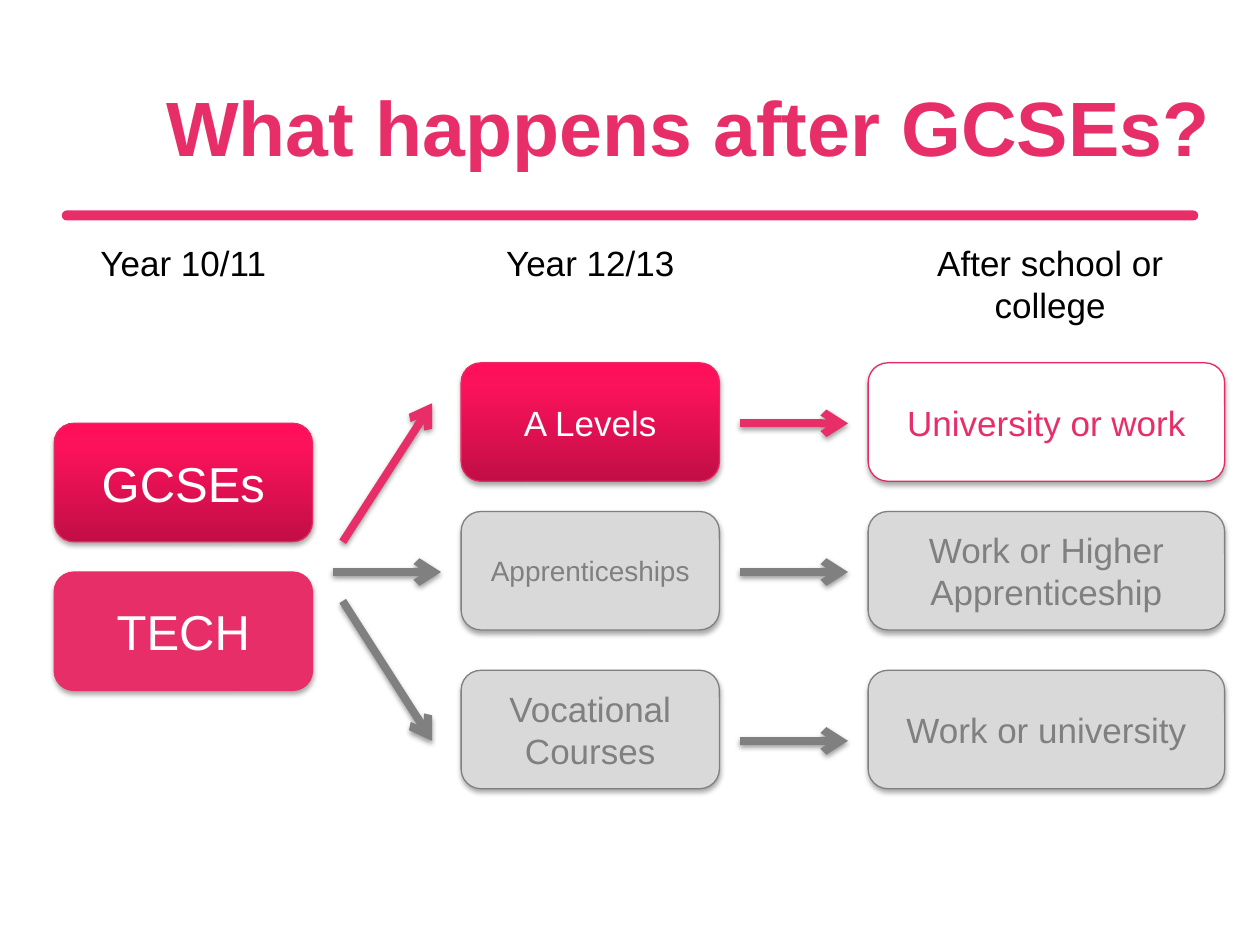
import copy
import pptx
import pptx.util
import pptx.dml.color
import pptx.enum.shapes
import pptx.enum.text
import pptx.oxml
import pptx.oxml.ns

Inches, Pt = pptx.util.Inches, pptx.util.Pt
Align, Anchor = pptx.enum.text.PP_ALIGN, pptx.enum.text.MSO_ANCHOR
Round = pptx.enum.shapes.MSO_SHAPE.ROUNDED_RECTANGLE
Line = pptx.enum.shapes.MSO_CONNECTOR.STRAIGHT
qn = pptx.oxml.ns.qn

PINK, EDGE, GREY, PALE, WHITE, BLACK = "E72E68", "E62864", "808080", "D9D9D9", "FFFFFF", "000000"
GLOW = [(0, "C10E46"), (0.8, "FB125B"), (1, "FF0F5A")]
LEFT, MID, RIGHT = (0.43, 2.05), (3.66, 2.05), (6.89, 2.83)
ROWS = [2.88, 4.06, 5.32]
TALL = 0.94

TITLE = "What happens after GCSEs?"
HEADS = [
    (0.43, 2.05, 0.44, "Year 10/11"),
    (3.66, 2.05, 0.44, "Year 12/13"),
    (6.94, 2.79, 0.77, "After school or\ncollege"),
]
STYLES = {
    "glow": (GLOW, EDGE, WHITE),
    "pink": (PINK, PINK, WHITE),
    "open": (WHITE, EDGE, PINK),
    "grey": (PALE, GREY, GREY),
}
BOXES = [
    (LEFT, 3.36, "GCSEs", 28, "glow"),
    (LEFT, 4.54, "TECH", 28, "pink"),
    (MID, ROWS[0], "A Levels", 20, "glow"),
    (MID, ROWS[1], "Apprenticeships", 16, "grey"),
    (MID, ROWS[2], "Vocational Courses", 20, "grey"),
    (RIGHT, ROWS[0], "University or work", 20, "open"),
    (RIGHT, ROWS[1], "Work or Higher Apprenticeship", 20, "grey"),
    (RIGHT, ROWS[2], "Work or university", 20, "grey"),
]
ARROWS = [
    (2.72, 4.3, 3.43, 3.2, PINK),
    (2.64, 4.54, 3.5, 4.54, GREY),
    (2.72, 4.77, 3.43, 5.88, GREY),
] + [(5.87, y, 6.73, y, tint) for y, tint in ((3.36, PINK), (4.54, GREY), (5.88, GREY))]


def color(code):
    return pptx.dml.color.RGBColor.from_string(code)


def write(shape, text, size=20, tint=BLACK, bold=False, align=Align.CENTER, anchor=Anchor.MIDDLE):
    frame = shape.text_frame
    frame.word_wrap = True
    frame.vertical_anchor = anchor
    frame.text = text
    for para in frame.paragraphs:
        para.alignment = align
        font = para.font
        font.name, font.size, font.bold = "Arial", Pt(size), bold
        font.color.rgb = color(tint)


def paint(fill, look):
    if isinstance(look, str):
        fill.solid()
        fill.fore_color.rgb = color(look)
        return
    fill.gradient()
    fill.gradient_angle = 90
    first = fill.gradient_stops[0]._gs
    first.addnext(copy.deepcopy(first))
    for stop, (place, code) in zip(fill.gradient_stops, look):
        stop.position = place
        stop.color.rgb = color(code)


def shade(shape, alpha, drop):
    shape._element.spPr.append(pptx.oxml.parse_xml(
        f'<a:effectLst {pptx.oxml.ns.nsdecls("a")}>'
        f'<a:outerShdw blurRad="{Pt(3.1)}" dist="{Pt(drop)}" dir="5400000" rotWithShape="0">'
        f'<a:srgbClr val="{BLACK}"><a:alpha val="{alpha * 1000}"/></a:srgbClr>'
        '</a:outerShdw></a:effectLst>'))


def block(x, y, w, h, look):
    shape = slide.shapes.add_shape(Round, Inches(x), Inches(y), Inches(w), Inches(h))
    paint(shape.fill, look)
    return shape


deck = pptx.Presentation()
deck.slide_width, deck.slide_height = Inches(10), Inches(7.5)
slide = deck.slides.add_slide(deck.slide_layouts[5])

title = slide.shapes.title
title.left, title.top, title.width, title.height = map(Inches, (1.22, 0.37, 8.78, 1.25))
write(title, TITLE, size=44, tint=PINK, bold=True, align=Align.LEFT)

rule = block(0.49, 1.67, 9.02, 0.08, PINK)
rule.adjustments[0] = 0.5
rule.line.fill.background()
rule.shadow.inherit = False

for (x, w), y, text, size, style in BOXES:
    look, edge, ink = STYLES[style]
    box = block(x, y, w, TALL, look)
    box.line.color.rgb = color(edge)
    box.line.width = Pt(0.75)
    shade(box, 35, 1.8)
    write(box, text, size=size, tint=ink)

for x1, y1, x2, y2, tint in ARROWS:
    arrow = slide.shapes.add_connector(Line, *map(Inches, (x1, y1, x2, y2)))
    arrow.line.color.rgb = color(tint)
    arrow.line.width = Pt(4.5)
    tip = pptx.oxml.parse_xml(f'<a:tailEnd {pptx.oxml.ns.nsdecls("a")} type="arrow"/>')
    arrow._element.spPr.find(qn("a:ln")).append(tip)
    shade(arrow, 38, 1.6)

for x, w, h, text in HEADS:
    head = slide.shapes.add_textbox(Inches(x), Inches(1.87), Inches(w), Inches(h))
    write(head, text, anchor=Anchor.TOP)

deck.save("out.pptx")
